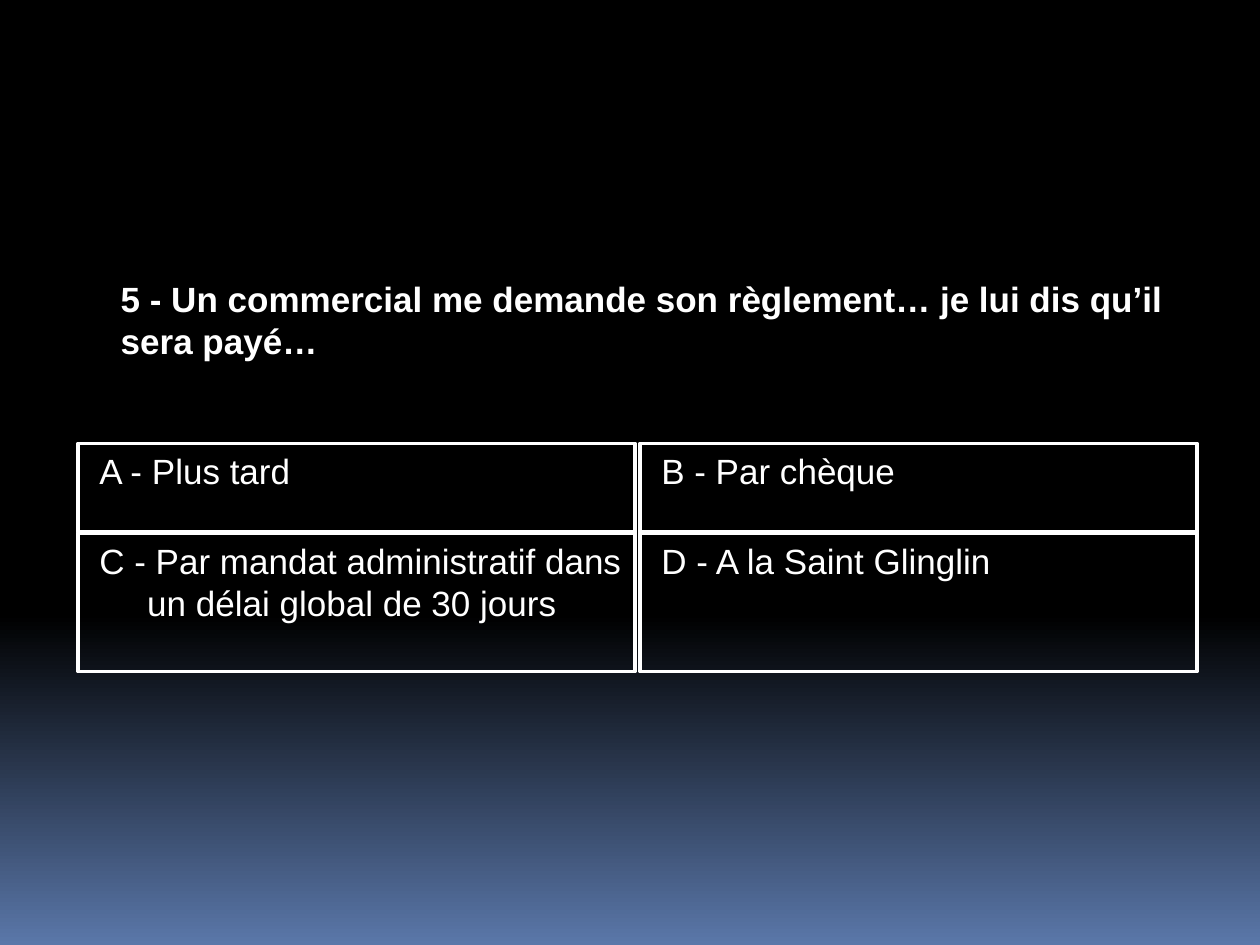
from dataclasses import dataclass

from pptx import Presentation
from pptx import util as u
from pptx.dml.color import RGBColor
from pptx.enum import shapes, text


@dataclass(frozen=True)
class Theme:
    ink: RGBColor = RGBColor(0xFF, 0xFF, 0xFF)
    night: RGBColor = RGBColor(0x00, 0x00, 0x00)
    horizon: RGBColor = RGBColor(0x5A, 0x77, 0xA9)
    font: str = "Arial"
    size: float = 20
    border: float = 2.25


@dataclass(frozen=True)
class Answer:
    column: int
    row: int
    wording: str


THEME = Theme()
QUESTION = "5 - Un commercial me demande son règlement… je lui dis qu’il sera payé…"
ANSWERS = [
    Answer(0, 0, "A - Plus tard"),
    Answer(1, 0, "B - Par chèque"),
    Answer(0, 1, "C - Par mandat administratif dans un délai global de 30 jours"),
    Answer(1, 1, "D - A la Saint Glinglin"),
]
GRID_LEFT, GRID_TOP = 0.62, 3.52
COLUMN_WIDTH, COLUMN_GAP = 4.42, 0.04
ROW_HEIGHTS, ROW_GAP = (0.7, 1.1), 0.01


def paint_background(slide) -> None:
    fill = slide.background.fill
    fill.gradient()
    fill.gradient_angle = 270
    stops = ((0.65, THEME.night), (1.0, THEME.horizon))
    for stop, (position, color) in zip(fill.gradient_stops, stops):
        stop.position = position
        stop.color.rgb = color


def write(frame, wording: str, anchor, bold: bool = False):
    frame.word_wrap = True
    frame.vertical_anchor = anchor
    paragraph = frame.paragraphs[0]
    paragraph.text = wording
    paragraph.alignment = text.PP_ALIGN.LEFT
    paragraph.font.name = THEME.font
    paragraph.font.size = u.Pt(THEME.size)
    paragraph.font.bold = bold
    paragraph.font.color.rgb = THEME.ink
    return paragraph


def add_question(slide, wording: str) -> None:
    area = (u.Inches(side) for side in (0.86, 2.11, 8.5, 0.85))
    question = slide.shapes.add_textbox(*area)
    write(question.text_frame, wording, text.MSO_ANCHOR.MIDDLE, bold=True)


def add_answer(slide, answer: Answer) -> None:
    left = GRID_LEFT + answer.column * (COLUMN_WIDTH + COLUMN_GAP)
    top = GRID_TOP + sum(ROW_HEIGHTS[:answer.row]) + answer.row * ROW_GAP
    area = (u.Inches(side) for side in (left, top, COLUMN_WIDTH, ROW_HEIGHTS[answer.row]))
    box = slide.shapes.add_shape(shapes.MSO_SHAPE.RECTANGLE, *area)
    box.shadow.inherit = False
    box.fill.background()
    box.line.color.rgb = THEME.ink
    box.line.width = u.Pt(THEME.border)
    paragraph = write(box.text_frame, answer.wording, text.MSO_ANCHOR.TOP)
    paragraph.space_before = u.Pt(7)
    indents = paragraph._p.get_or_add_pPr()
    indents.set("marL", str(u.Inches(0.45)))
    indents.set("indent", str(u.Inches(-0.38)))


def main() -> None:
    deck = Presentation()
    deck.slide_width, deck.slide_height = u.Inches(10), u.Inches(7.5)
    slide = deck.slides.add_slide(deck.slide_layouts[6])
    paint_background(slide)
    add_question(slide, QUESTION)
    for answer in ANSWERS:
        add_answer(slide, answer)
    deck.save("out.pptx")


if __name__ == "__main__":
    main()
